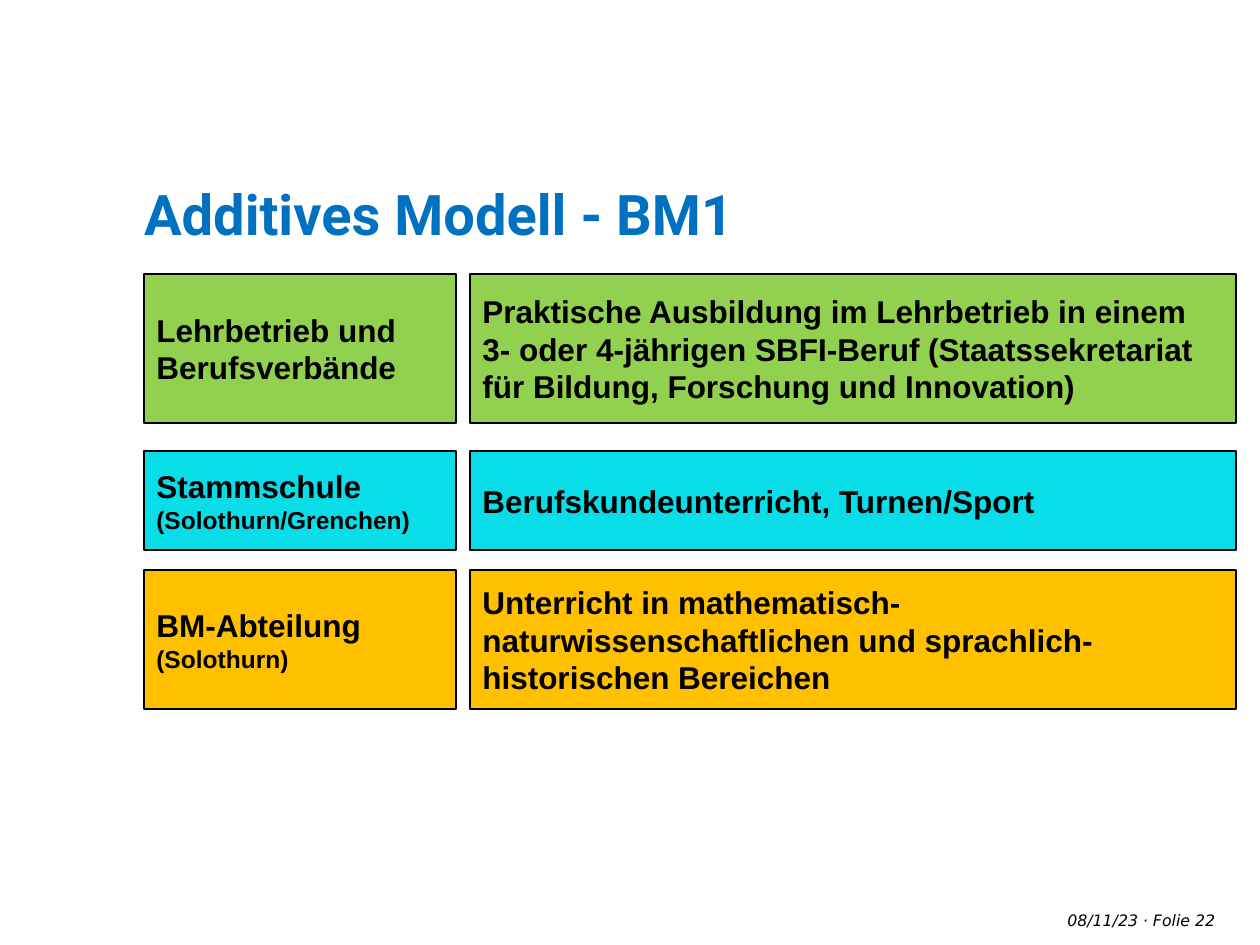
from pptx import Presentation
from pptx import util as u
from pptx.dml.color import RGBColor
from pptx.enum import shapes, text

PX_PER_INCH = 126
TITLE_ONLY = 5
LABEL_WIDTH, COLUMN_GAP = 312, 14


def px(length):
    return u.Emu(round(length * 914400 / PX_PER_INCH))


def colour(hex_string):
    return RGBColor.from_string(hex_string)


def add_run(paragraph, words, size, font="Arial", hex_string="000000", bold=False, italic=False):
    run = paragraph.add_run()
    run.text = words
    run.font.size = u.Pt(size)
    run.font.name = font
    run.font.bold = bold
    run.font.italic = italic
    run.font.color.rgb = colour(hex_string)


def clear_margins(frame):
    frame.margin_left = frame.margin_right = frame.margin_top = frame.margin_bottom = 0


def place_title(slide, words, left, top, width, height):
    title = slide.shapes.title
    title.left, title.top, title.width, title.height = map(px, (left, top, width, height))
    frame = title.text_frame
    clear_margins(frame)
    frame.vertical_anchor = text.MSO_ANCHOR.MIDDLE
    frame.paragraphs[0].alignment = text.PP_ALIGN.LEFT
    add_run(frame.paragraphs[0], words, 32, "Roboto", "0070C0", bold=True)


def add_panel(slide, paragraphs, fill, left, top, width, height, place=None):
    """Draw a filled box of bold paragraphs, with an optional smaller place line."""
    panel = slide.shapes.add_shape(
        shapes.MSO_SHAPE.RECTANGLE, *map(px, (left, top, width, height)))
    panel.shadow.inherit = False
    panel.fill.solid()
    panel.fill.fore_color.rgb = colour(fill)
    panel.line.color.rgb = colour("000000")
    panel.line.width = u.Pt(0.75)
    frame = panel.text_frame
    frame.word_wrap = True
    frame.vertical_anchor = text.MSO_ANCHOR.MIDDLE
    for index, words in enumerate(paragraphs):
        paragraph = frame.add_paragraph() if index else frame.paragraphs[0]
        paragraph.alignment = text.PP_ALIGN.LEFT
        add_run(paragraph, words, 18, bold=True)
    if place:
        paragraph.add_line_break()
        add_run(paragraph, place, 14, bold=True)


def add_provider_row(slide, provider, place, duties, fill, left, top, width, height):
    add_panel(slide, [provider], fill, left, top, LABEL_WIDTH, height, place)
    offset = LABEL_WIDTH + COLUMN_GAP
    add_panel(slide, duties, fill, left + offset, top, width - offset, height)


def add_footer(slide, date, folio, left, top, width, height):
    date_width, gap = 194, 5
    folio_left = date_width + gap
    parts = (
        (date, 0, date_width, text.PP_ALIGN.RIGHT),
        (folio, folio_left, width - folio_left, text.PP_ALIGN.LEFT),
    )
    for words, offset, part_width, alignment in parts:
        box = slide.shapes.add_textbox(*map(px, (left + offset, top, part_width, height)))
        frame = box.text_frame
        frame.word_wrap = True
        clear_margins(frame)
        frame.paragraphs[0].alignment = alignment
        add_run(frame.paragraphs[0], words, 9, "DejaVu Sans", italic=True)


def main():
    deck = Presentation()
    deck.slide_width, deck.slide_height = px(1260), px(945)
    slide = deck.slides.add_slide(deck.slide_layouts[TITLE_ONLY])
    left, width = 144, 1092

    place_title(slide, "Additives Modell - BM1", left, 180, width, 66)
    rows = (
        ("Lehrbetrieb und Berufsverbände", None,
         ["Praktische Ausbildung im Lehrbetrieb in einem",
          "3- oder 4-jährigen SBFI-Beruf (Staatssekretariat für Bildung, "
          "Forschung und Innovation)"],
         "92D050", 274, 149),
        ("Stammschule", "(Solothurn/Grenchen)",
         ["Berufskundeunterricht, Turnen/Sport"],
         "08DDE8", 451, 99),
        ("BM-Abteilung", "(Solothurn)",
         ["Unterricht in mathematisch-naturwissenschaftlichen und "
          "sprachlich-historischen Bereichen"],
         "FFC000", 570, 139),
    )
    for provider, place, duties, fill, top, height in rows:
        add_provider_row(slide, provider, place, duties, fill, left, top, width, height)
    add_footer(slide, "08/11/23", "· Folie 22", 944, 911, 295, 25)

    deck.save("out.pptx")


if __name__ == "__main__":
    main()
